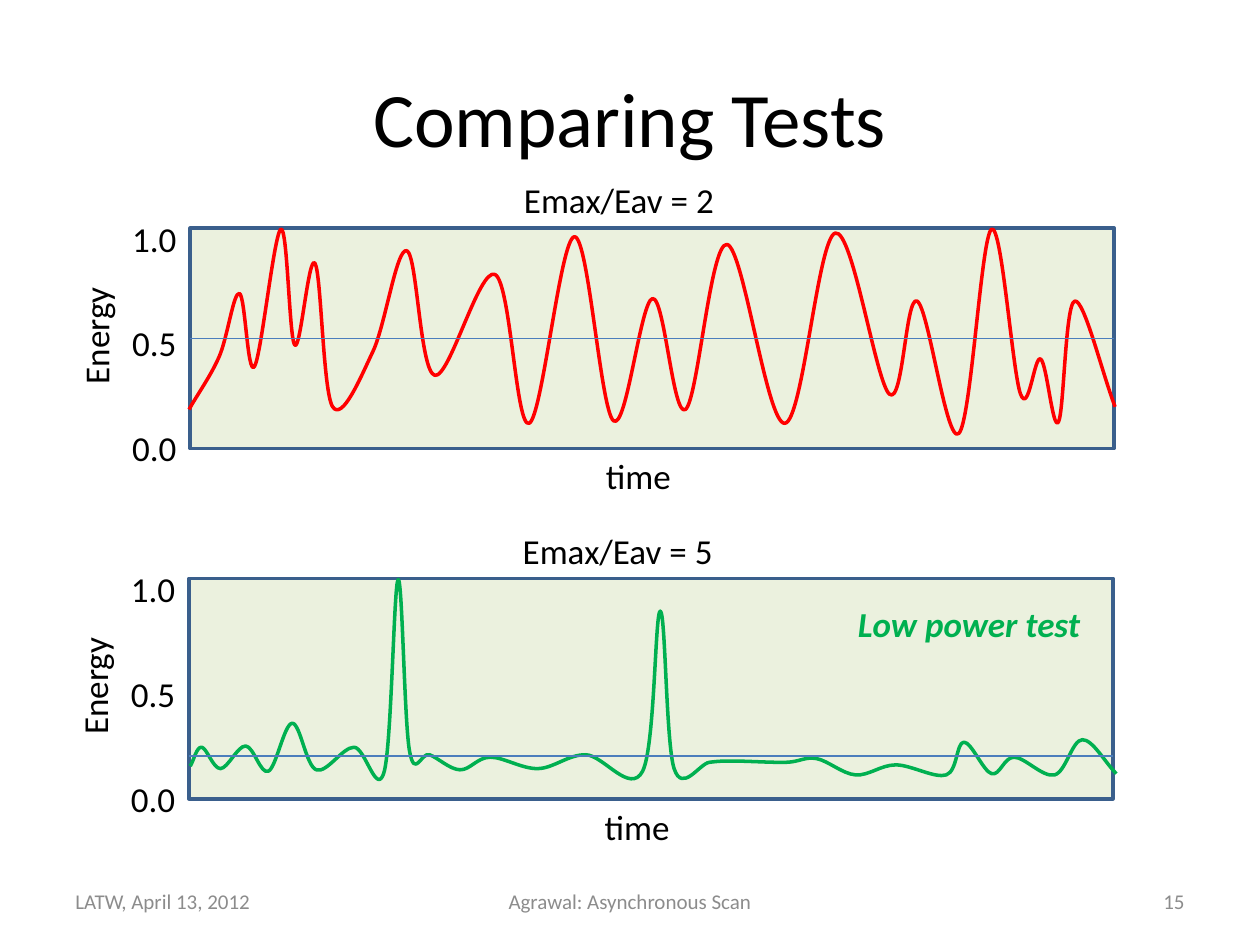
import pptx
import pptx.dml.color
import pptx.enum.shapes
import pptx.enum.text
import pptx.oxml
import pptx.oxml.ns
import pptx.util
from lxml import etree

Pt = pptx.util.Pt
RGB = pptx.dml.color.RGBColor.from_string
ALIGN = pptx.enum.text.PP_ALIGN
ANCHOR = pptx.enum.text.MSO_ANCHOR
qn = pptx.oxml.ns.qn


class Theme:
    font = "Calibri"
    text, muted = "000000", "8C8C8C"
    panel, border, average = "EBF1DE", "3A5F8C", "4B7EBC"
    red, green = "FF0000", "00B050"
    title_size, label_size, footer_size = 44, 20, 12
    curve_width, average_width = 2, 0.75


# Curve knots: points from the panel's left edge, points above its base
HIGH_POWER = [
    (-0.7, 22.3), (16.6, 52.6), (28.1, 88.6), (36.7, 46.8), (51.8, 125.3),
    (59.8, 59), (71.3, 105.8), (81.4, 23.8), (104.4, 55.4), (123.8, 113),
    (139.7, 41.8), (174.2, 99.4), (193.7, 14.4), (219.6, 121), (241.9, 15.8),
    (264.2, 85.7), (283, 22.3), (306.7, 116.6), (339.8, 14.4), (368.6, 123.1),
    (399.6, 31), (415.4, 84.2), (439.2, 8.6), (457.9, 125.3), (474.5, 31),
    (486, 51.1), (496.1, 15.1), (505.4, 84.2), (528.5, 23.8),
]
LOW_POWER = [
    (0.7, 18.7), (7.2, 29.5), (18, 17.3), (32.4, 30.2), (45.4, 15.8),
    (59, 43.2), (72.7, 16.6), (94.3, 29.5), (111.6, 15.8), (119.5, 125.3),
    (126, 27.4), (137.5, 25.2), (154.8, 16.6), (172.1, 23.8), (199.4, 17.3),
    (226.8, 25.2), (259.2, 15.8), (269.3, 107.3), (277.2, 17.3), (297.4, 20.9),
    (311.8, 21.6), (341.3, 20.9), (358.6, 23), (380.9, 13.7), (403.9, 19.4),
    (432.7, 13.7), (442.8, 32.4), (458.6, 14.4), (471.6, 23.8), (494.6, 13.7),
    (510.5, 33.8), (529.9, 14.4),
]


def add_text(s, box, lines, size=Theme.label_size, color=Theme.text, wrap=False,
             anchor=ANCHOR.TOP, para=None, font=None, rotation=0):
    sp = s.shapes.add_textbox(*map(Pt, box))
    sp.rotation = rotation
    tf = sp.text_frame
    tf.word_wrap, tf.vertical_anchor = wrap, anchor
    for i, line in enumerate(lines):
        p = tf.paragraphs[0] if i == 0 else tf.add_paragraph()
        for name, value in (para or {}).items():
            setattr(p, name, value)
        if i == 0:
            p.space_before = Pt(0)
        r = p.add_run()
        r.text = line
        style = {"name": Theme.font, "size": Pt(size), **(font or {})}
        for name, value in style.items():
            setattr(r.font, name, value)
        r.font.color.rgb = RGB(color)
    return sp


def set_line(sp, color, width):
    sp.line.color.rgb = RGB(color)
    sp.line.width = Pt(width)


def add_curve(s, knots, color):
    """Draw a smooth curve through the knots, given in points on the slide."""
    units = 100
    pts = [(x * units, y * units) for x, y in knots]
    builder = s.shapes.build_freeform(*pts[0], scale=Pt(1) / units)
    builder.add_line_segments(pts[1:], close=False)
    sp = builder.convert_to_shape()
    sp.shadow.inherit = False
    sp.fill.background()
    set_line(sp, color, Theme.curve_width)

    # Tangents: neighbour difference inside, a third of the end segment outside
    last = len(pts) - 1
    tangents = []
    for i in range(last + 1):
        a, b = pts[max(i - 1, 0)], pts[min(i + 1, last)]
        part = 3 if i in (0, last) else 6
        tangents.append([(v - u) / part for u, v in zip(a, b)])

    # Turn each straight segment into a Bezier segment
    left, top = (min(axis) for axis in zip(*pts))
    segments = list(sp._element.iter(qn("a:lnTo")))
    for i, seg in enumerate(segments):
        (x0, y0), (x1, y1) = pts[i], pts[i + 1]
        (u0, v0), (u1, v1) = tangents[i], tangents[i + 1]
        seg.tag = qn("a:cubicBezTo")
        seg.remove(seg[0])
        for x, y in ((x0 + u0, y0 + v0), (x1 - u1, y1 - v1), (x1, y1)):
            etree.SubElement(seg, qn("a:pt"), x=str(round(x - left)),
                             y=str(round(y - top)))


def add_average(s, panel, box, level):
    x, y, w, h = box
    y_level = y + h - level
    cn = s.shapes.add_connector(pptx.enum.shapes.MSO_CONNECTOR.STRAIGHT,
                                Pt(x), Pt(y_level), Pt(x + w), Pt(y_level))
    if level == h / 2:
        cn.begin_connect(panel, 1)
        cn.end_connect(panel, 3)
    set_line(cn, Theme.average, Theme.average_width)
    etree.SubElement(cn._element.spPr, qn("a:effectLst"))


def add_energy_plot(s, box, caption, knots, color, level, note=None):
    x, y, w, h = box
    # Panel
    panel = s.shapes.add_shape(pptx.enum.shapes.MSO_SHAPE.RECTANGLE, *map(Pt, box))
    panel.shadow.inherit = False
    panel.fill.solid()
    panel.fill.fore_color.rgb = RGB(Theme.panel)
    set_line(panel, Theme.border, Theme.curve_width)
    # Energy curve and its average
    add_curve(s, [(x + dx, y + h - up) for dx, up in knots], color)
    add_average(s, panel, box, level)
    # Caption and axis labels
    add_text(s, (x + 183.6, y - 31.6, 123.8, 31.6), [caption])
    add_text(s, (x + 230.4, y + h, 52.6, 31.6), ["time"])
    add_text(s, (x - 89.3, y + 45.4, 70.6, 31.6), ["Energy"], rotation=270)
    add_text(s, (x - 40.3, y - 15.8, 40.3, 158.4), ["1.0", "0.5", "0.0"],
             para={"line_spacing": Pt(30), "space_before": Pt(30)})
    if note:
        add_text(s, (x + 375.1, y + 10.1, 142.6, 31.6), [note], color=color,
                 font={"bold": True, "italic": True})


def add_title(s, box, title):
    add_text(s, box, [title], size=Theme.title_size, wrap=True,
             anchor=ANCHOR.MIDDLE, para={"alignment": ALIGN.CENTER})


def add_footer(s, box, date, talk, number):
    x, y, w, h = box
    side, middle = 168, 228
    parts = [(date, x, side, ALIGN.LEFT),
             (talk, x + (w - middle) / 2, middle, ALIGN.CENTER),
             (number, x + w - side, side, ALIGN.RIGHT)]
    for text, left, width, align in parts:
        add_text(s, (left, y, width, h), [text], size=Theme.footer_size,
                 color=Theme.muted, wrap=True, anchor=ANCHOR.MIDDLE,
                 para={"alignment": align})


def main():
    prs = pptx.Presentation()
    prs.slide_width, prs.slide_height = Pt(720), Pt(540)
    s = prs.slides.add_slide(prs.slide_layouts[6])
    add_title(s, (36, 21.6, 648, 90), "Comparing Tests")
    add_energy_plot(s, (108.7, 130.3, 528, 126), "Emax/Eav = 2",
                    HIGH_POWER, Theme.red, 63)
    add_energy_plot(s, (108, 330.5, 528, 126), "Emax/Eav = 5",
                    LOW_POWER, Theme.green, 24.5, "Low power test")
    add_footer(s, (36, 500.5, 648, 28.8), "LATW, April 13, 2012",
               "Agrawal: Asynchronous Scan", "15")
    prs.save("out.pptx")


if __name__ == "__main__":
    main()
